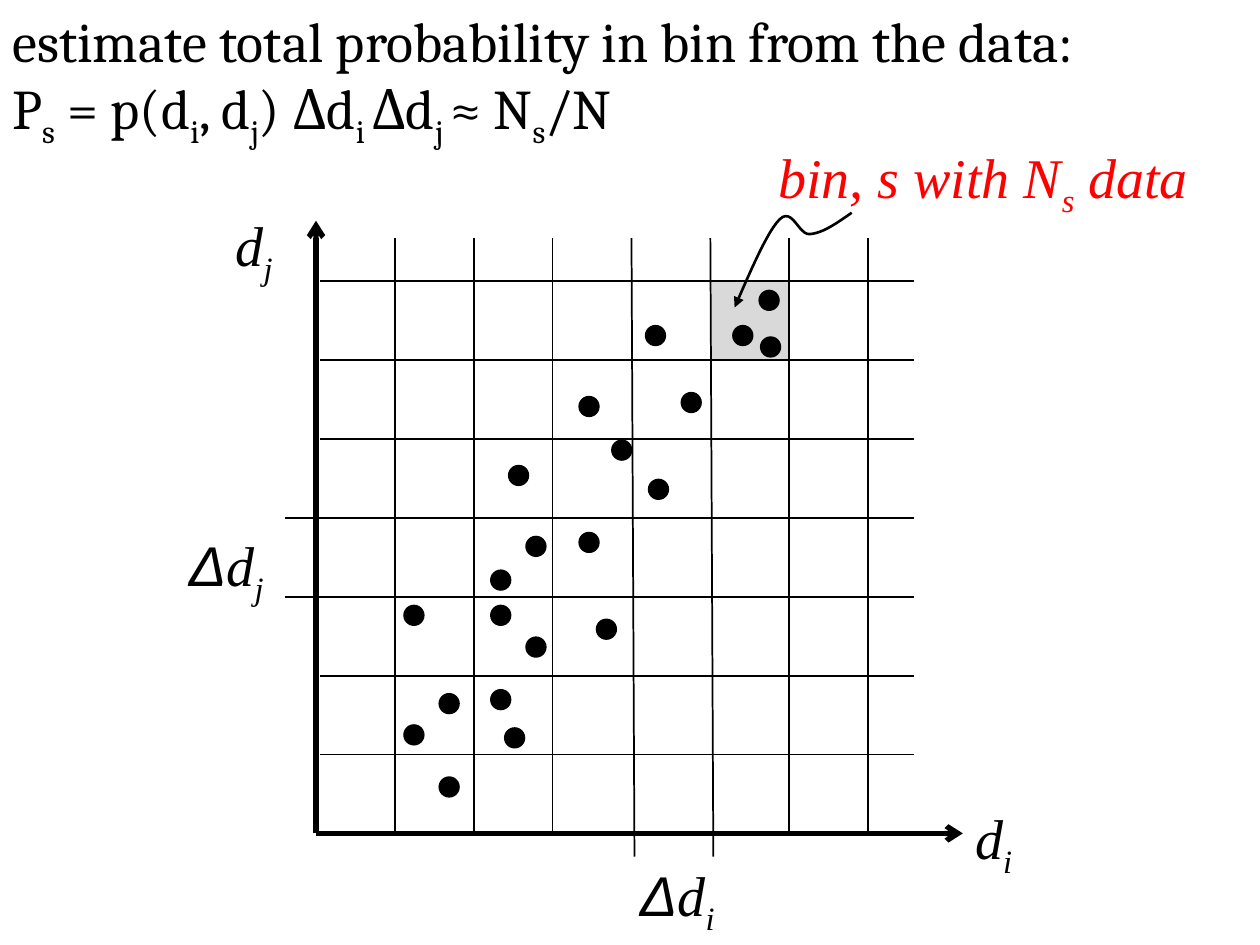
"""Build the slide on estimating bin probability from scattered data."""
from lxml import etree
from pptx import Presentation
from pptx.dml.color import RGBColor
from pptx.enum import shapes, text
from pptx.oxml import ns
from pptx.util import Cm, Pt

BLACK, RED, GREY = "000000", "FF0000", "D9D9D9"
SERIF, SANS, HEADING = "Times New Roman", "Arial", "Cambria"

STATEMENT = [
    "estimate total probability in bin from the data:",
    "P|s| = p(d|i|, d|j|) Δd|i |Δd|j |≈ N|s|/N",
]
LABELS = [
    ("d|i", 19.41, 16.08, 1.75, BLACK),
    ("d|j", 4.5, 4.11, 1.75, BLACK),
    ("Δ||d|i", 12.65, 17.22, 2.46, BLACK),
    ("Δ||d|j", 3.56, 10.57, 3.1, BLACK),
    ("bin, s with N|s| data", 15.44, 2.74, 9.32, RED),
]
DATA = [
    (11.66, 7.98), (12.32, 8.86), (10.24, 9.37), (13, 6.55), (13.72, 7.9),
    (13.06, 9.65), (11.66, 10.72), (12.01, 12.47), (9.88, 12.19),
    (10.59, 10.8), (9.88, 11.48), (10.59, 12.83), (9.88, 13.89),
    (8.13, 14.6), (8.84, 15.65), (8.84, 13.97), (10.16, 14.66),
    (8.13, 12.19), (14.76, 6.55), (15.29, 5.84), (15.32, 6.78),
]
DOT = 0.43
POINTER_START = (14.81, 6.2)
POINTER_CURVES = [
    ((15.14, 5.44), (15.47, 4.67), (15.72, 4.42)),
    ((15.98, 4.17), (16.1, 4.75), (16.33, 4.72)),
    ((16.59, 4.7), (16.87, 4.5), (17.17, 4.29)),
]
CURVE_STEPS = 12

ORIGIN_X, ORIGIN_Y, BIN = 6.37, 16.8, 1.59
AXIS_TOP, AXIS_RIGHT = 4.45, 19.41
GRID_LEFT, GRID_RIGHT, GRID_TOP = 6.45, 18.42, 4.8
MARK_LEFT, MARK_BOTTOM, MARK_SLANT = 5.75, 17.27, 0.06
LINES, MARKED_COLUMNS, MARKED_ROWS = range(1, 8), (4, 5), (3, 4)
BIN_COLUMN, BIN_ROW = 5, 7


def rgb(value):
    return RGBColor.from_string(value)


def add_arrowhead(drawn, end, kind):
    outline = drawn._element.spPr.find(ns.qn("a:ln"))
    etree.SubElement(outline, ns.qn(f"a:{end}"), type=kind)


def add_line(slide, x1, y1, x2, y2, width):
    line = slide.shapes.add_connector(
        shapes.MSO_CONNECTOR.STRAIGHT, Cm(x1), Cm(y1), Cm(x2), Cm(y2))
    line.line.color.rgb = rgb(BLACK)
    line.line.width = Pt(width)
    etree.SubElement(line._element.spPr, ns.qn("a:effectLst"))
    return line


def add_filled(slide, preset, x, y, size, fill):
    figure = slide.shapes.add_shape(preset, Cm(x), Cm(y), Cm(size), Cm(size))
    figure.fill.solid()
    figure.fill.fore_color.rgb = rgb(fill)
    figure.line.fill.background()
    figure.shadow.inherit = False


def add_formula(slide, lines, x, y, width, height, font, color, italic):
    frame = slide.shapes.add_textbox(Cm(x), Cm(y), Cm(width), Cm(height)).text_frame
    frame.word_wrap = True
    frame.auto_size = text.MSO_AUTO_SIZE.SHAPE_TO_FIT_TEXT
    frame.text = "\n".join(line.replace("|", "") for line in lines)
    for paragraph, line in zip(frame.paragraphs, lines):
        paragraph.text = ""
        for index, part in enumerate(line.split("|")):
            if not part:
                continue
            run = paragraph.add_run()
            run.text = part
            run.font.size = Pt(32)
            run.font.name = SANS if part == "Δ" else font
            run.font.italic = italic
            run.font.color.rgb = rgb(color)
            if index % 2:
                run.font._element.set("baseline", "-25000")


def curve_points(start, curves):
    for first, second, end in curves:
        for step in range(1, CURVE_STEPS + 1):
            t = step / CURVE_STEPS
            weights = ((1 - t) ** 3, 3 * t * (1 - t) ** 2, 3 * t * t * (1 - t), t ** 3)
            corners = (start, first, second, end)
            yield tuple(Cm(sum(w * c[axis] for w, c in zip(weights, corners)))
                        for axis in (0, 1))
        start = end


def add_pointer(slide):
    builder = slide.shapes.build_freeform(*(Cm(value) for value in POINTER_START))
    builder.add_line_segments(curve_points(POINTER_START, POINTER_CURVES), close=False)
    pointer = builder.convert_to_shape()
    pointer.fill.background()
    pointer.line.color.rgb = rgb(BLACK)
    pointer.line.width = Pt(1.5)
    pointer.shadow.inherit = False
    add_arrowhead(pointer, "headEnd", "triangle")


def add_grid(slide):
    for number in LINES:
        x, y = ORIGIN_X + number * BIN, ORIGIN_Y - number * BIN
        marked = number in MARKED_COLUMNS
        add_line(slide, x, GRID_TOP, x + MARK_SLANT * marked,
                 MARK_BOTTOM if marked else ORIGIN_Y, 1)
        left = MARK_LEFT if number in MARKED_ROWS else GRID_LEFT
        add_line(slide, left, y, GRID_RIGHT, y, 1)


def main():
    deck = Presentation()
    deck.slide_width, deck.slide_height = Cm(25.4), Cm(19.05)
    slide = deck.slides.add_slide(deck.slide_layouts[6])

    add_filled(slide, shapes.MSO_SHAPE.RECTANGLE, ORIGIN_X + BIN_COLUMN * BIN,
               ORIGIN_Y - BIN_ROW * BIN, BIN, GREY)
    for end in ((ORIGIN_X, AXIS_TOP), (AXIS_RIGHT, ORIGIN_Y)):
        axis = add_line(slide, ORIGIN_X, ORIGIN_Y, *end, 3)
        add_arrowhead(axis, "tailEnd", "arrow")
    add_grid(slide)
    for x, y in DATA:
        add_filled(slide, shapes.MSO_SHAPE.OVAL, x, y, DOT, BLACK)
    add_pointer(slide)
    for label, x, y, width, color in LABELS:
        add_formula(slide, [label], x, y, width, 1.63, SERIF, color, True)
    add_formula(slide, STATEMENT, 0, 0, 25.4, 3, HEADING, BLACK, False)

    deck.save("out.pptx")


if __name__ == "__main__":
    main()
